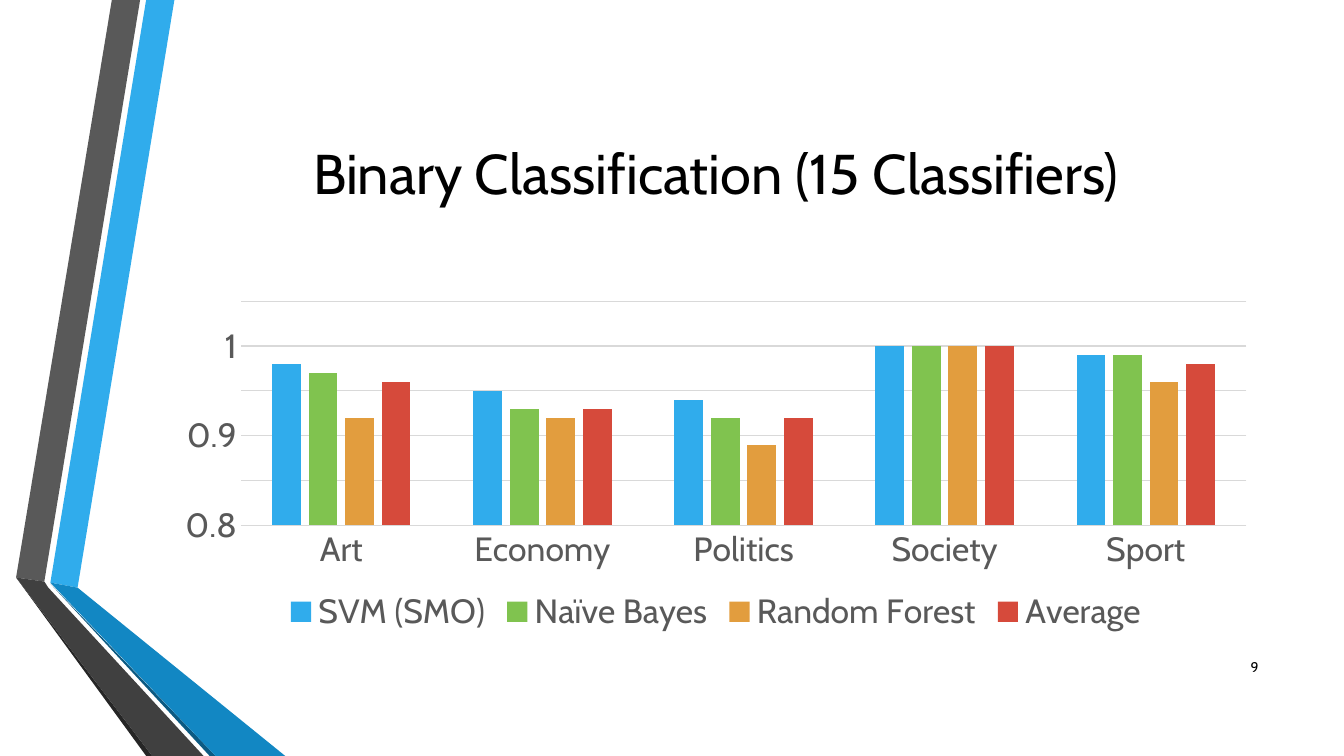
from pptx import Presentation
from pptx.chart.data import CategoryChartData
from pptx.dml.color import RGBColor
from pptx.enum.chart import XL_CHART_TYPE, XL_LEGEND_POSITION, XL_TICK_MARK
from pptx.enum.text import MSO_ANCHOR, PP_ALIGN
from pptx.util import Inches, Pt

FONT = "Cabin"
BLACK, GREY, PALE_GREY = "000000", "595959", "D9D9D9"

RIBBONS = [
    ("30ACEC", [(0.5, 5.78), (0.77, 5.83), (1.73, 0), (1.45, 0)]),
    (GREY, [(1.39, 0), (1.11, 0), (0.16, 5.73), (0.44, 5.77)]),
    ("262626", [(0.16, 5.73), (1.45, 7.5), (1.51, 7.5)]),
    ("0C5A82", [(0.5, 5.79), (2.08, 7.5), (2.14, 7.5)]),
    ("1287C3", [(0.5, 5.78), (2.14, 7.5), (2.83, 7.5), (0.77, 5.83)]),
    ("404040", [(2.02, 7.5), (0.48, 5.83), (0.44, 5.77), (0.16, 5.73),
                (1.51, 7.5)]),
]
TOPICS = ["Art", "Economy", "Politics", "Society", "Sport"]
CLASSIFIERS = [
    ("SVM (SMO)", "30ACEC", [0.98, 0.95, 0.94, 1, 0.99]),
    ("Naïve Bayes", "80C34F", [0.97, 0.93, 0.92, 1, 0.99]),
    ("Random Forest", "E29D3E", [0.92, 0.92, 0.89, 1, 0.96]),
    ("Average", "D64A3B", [0.96, 0.93, 0.92, 1, 0.98]),
]


def rgb(code):
    return RGBColor.from_string(code)


def style_font(font, size, color):
    font.name = FONT
    font.size = Pt(size)
    font.color.rgb = rgb(color)


def style_line(line, color):
    line.color.rgb = rgb(color)
    line.width = Pt(0.75)


def add_ribbon(slide, color, points):
    corners = [(Inches(x), Inches(y)) for x, y in points]
    builder = slide.shapes.build_freeform(*corners[0])
    builder.add_line_segments(corners[1:], close=True)
    ribbon = builder.convert_to_shape()
    ribbon.shadow.inherit = False
    ribbon.fill.solid()
    ribbon.fill.fore_color.rgb = rgb(color)
    ribbon.line.fill.background()


def add_text(slide, box, text, size, align):
    frame = slide.shapes.add_textbox(*map(Inches, box)).text_frame
    frame.word_wrap = True
    frame.vertical_anchor = MSO_ANCHOR.MIDDLE
    paragraph = frame.paragraphs[0]
    paragraph.alignment = align
    run = paragraph.add_run()
    run.text = text
    style_font(run.font, size, BLACK)


def style_axes(chart):
    topics, accuracy = chart.category_axis, chart.value_axis
    for axis in (topics, accuracy):
        axis.major_tick_mark = axis.minor_tick_mark = XL_TICK_MARK.NONE
        style_font(axis.tick_labels.font, 24, GREY)
    style_line(topics.format.line, PALE_GREY)
    accuracy.format.line.fill.background()
    style_line(accuracy.major_gridlines.format.line, PALE_GREY)
    accuracy.minimum_scale = 0.8
    accuracy.maximum_scale = 1.05
    accuracy.major_unit = 0.05


def add_accuracy_chart(slide, box):
    data = CategoryChartData()
    data.categories = TOPICS
    for name, _, values in CLASSIFIERS:
        data.add_series(name, values)
    chart = slide.shapes.add_chart(
        XL_CHART_TYPE.COLUMN_CLUSTERED, *map(Inches, box), data).chart
    style_font(chart.font, 10, BLACK)
    chart.has_title = False
    chart.has_legend = True
    chart.legend.position = XL_LEGEND_POSITION.BOTTOM
    chart.legend.include_in_layout = False
    style_font(chart.legend.font, 24, GREY)
    style_axes(chart)

    columns = chart.plots[0]
    columns.gap_width = 219
    columns.overlap = -27
    columns.vary_by_categories = False
    for series, (_, color, _) in zip(columns.series, CLASSIFIERS):
        series.format.fill.solid()
        series.format.fill.fore_color.rgb = rgb(color)


def main():
    deck = Presentation()
    deck.slide_width = Inches(13.33)
    deck.slide_height = Inches(7.5)
    slide = deck.slides.add_slide(deck.slide_layouts[6])
    for color, points in RIBBONS:
        add_ribbon(slide, color, points)
    add_text(slide, (1.62, 0.75, 10.96, 1.92),
             "Binary Classification (15 Classifiers)", 40, PP_ALIGN.CENTER)
    add_text(slide, (11.98, 6.42, 0.6, 0.4), "9", 10, PP_ALIGN.RIGHT)
    add_accuracy_chart(slide, (1.62, 2.92, 10.96, 3.42))
    deck.save("out.pptx")


if __name__ == "__main__":
    main()
